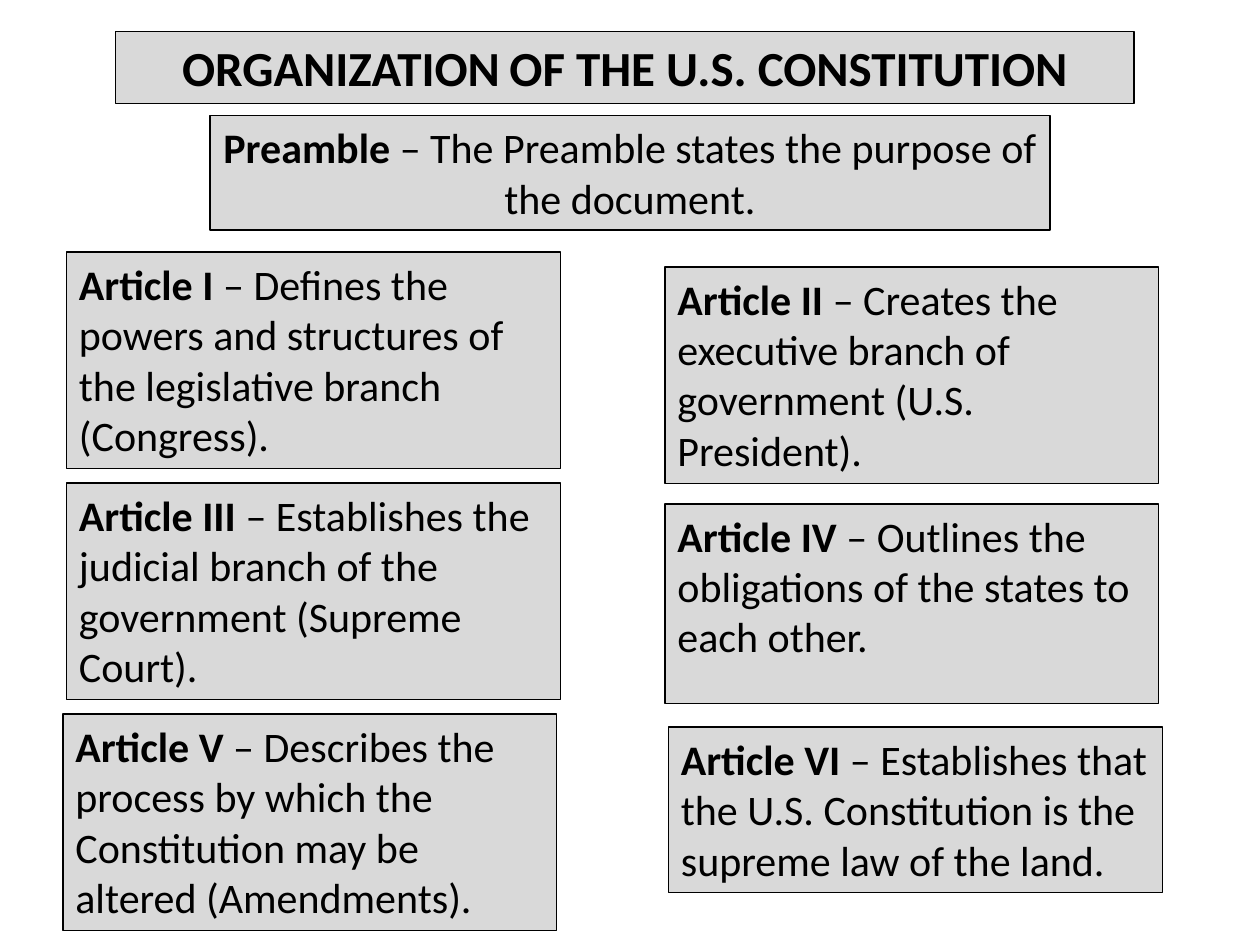
from dataclasses import dataclass

from pptx import Presentation
from pptx.dml.color import RGBColor
from pptx.enum.text import MSO_ANCHOR, MSO_AUTO_SIZE, PP_ALIGN
from pptx.util import Pt

TOP = MSO_ANCHOR.TOP
FIXED = MSO_AUTO_SIZE.NONE
LEFT, CENTER = PP_ALIGN.LEFT, PP_ALIGN.CENTER
TITLE_ONLY = 5


@dataclass(frozen=True)
class Theme:
    font: str = "Calibri"
    ink: RGBColor = RGBColor(0, 0, 0)
    panel: RGBColor = RGBColor(0xD9, 0xD9, 0xD9)
    title: int = 28
    body: int = 24
    rule: float = 0.75


class Deck:
    def __init__(self, theme, slide):
        self.theme = theme
        self.slide = slide

    def panel(self, shape, align, size):
        """Give a shape the grey framed look and return its paragraph."""
        shape.fill.solid()
        shape.fill.fore_color.rgb = self.theme.panel
        shape.line.color.rgb = self.theme.ink
        shape.line.width = Pt(self.theme.rule)
        frame = shape.text_frame
        frame.word_wrap = True
        frame.auto_size = FIXED
        frame.vertical_anchor = TOP
        para = frame.paragraphs[0]
        para.alignment = align
        para.font.name = self.theme.font
        para.font.size = Pt(size)
        para.font.color.rgb = self.theme.ink
        return para

    def title(self, words, box):
        """Set the title, with smaller gaps between its words."""
        shape = self.slide.shapes.title
        shape.left, shape.top, shape.width, shape.height = map(Pt, box)
        para = self.panel(shape, CENTER, self.theme.title)
        para.font.bold = True
        for i, word in enumerate(words):
            if i:
                gap = para.add_run()
                gap.text = " "
                gap.font.size = Pt(self.theme.body)
            para.add_run().text = word

    def entry(self, name, text, box, align=LEFT):
        """Add a panel with a bold name and its description."""
        shape = self.slide.shapes.add_textbox(*map(Pt, box))
        para = self.panel(shape, align, self.theme.body)
        head = para.add_run()
        head.text = name
        head.font.bold = True
        para.add_run().text = f" – {text}"


WIDE, TALL = 282.2, 123.8
ARTICLES = [
    ("I", "Defines the powers and structures of the legislative branch "
     "(Congress).", 38, 144, TALL),
    ("II", "Creates the executive branch of government (U.S. President).",
     380, 152.5, TALL),
    ("III", "Establishes the judicial branch of the government "
     "(Supreme Court).", 38, 276, TALL),
    ("IV", "Outlines the obligations of the states to each other.",
     380, 288, 114),
    ("V", "Describes the process by which the Constitution may be altered "
     "(Amendments).", 36, 408, TALL),
    ("VI", "Establishes that the U.S. Constitution is the supreme law "
     "of the land.", 382, 415.5, 94.5),
]


def main():
    prs = Presentation()
    prs.slide_width, prs.slide_height = Pt(720), Pt(540)
    slide = prs.slides.add_slide(prs.slide_layouts[TITLE_ONLY])
    deck = Deck(Theme(), slide)
    deck.title(["ORGANIZATION", "OF THE U.S. CONSTITUTION"],
               (66, 18, 582, 41))
    deck.entry("Preamble", "The Preamble states the purpose of the document.",
               (120, 66, 480, 65.5), CENTER)
    for num, text, left, top, high in ARTICLES:
        deck.entry(f"Article {num}", text, (left, top, WIDE, high))
    prs.save("out.pptx")


if __name__ == "__main__":
    main()
